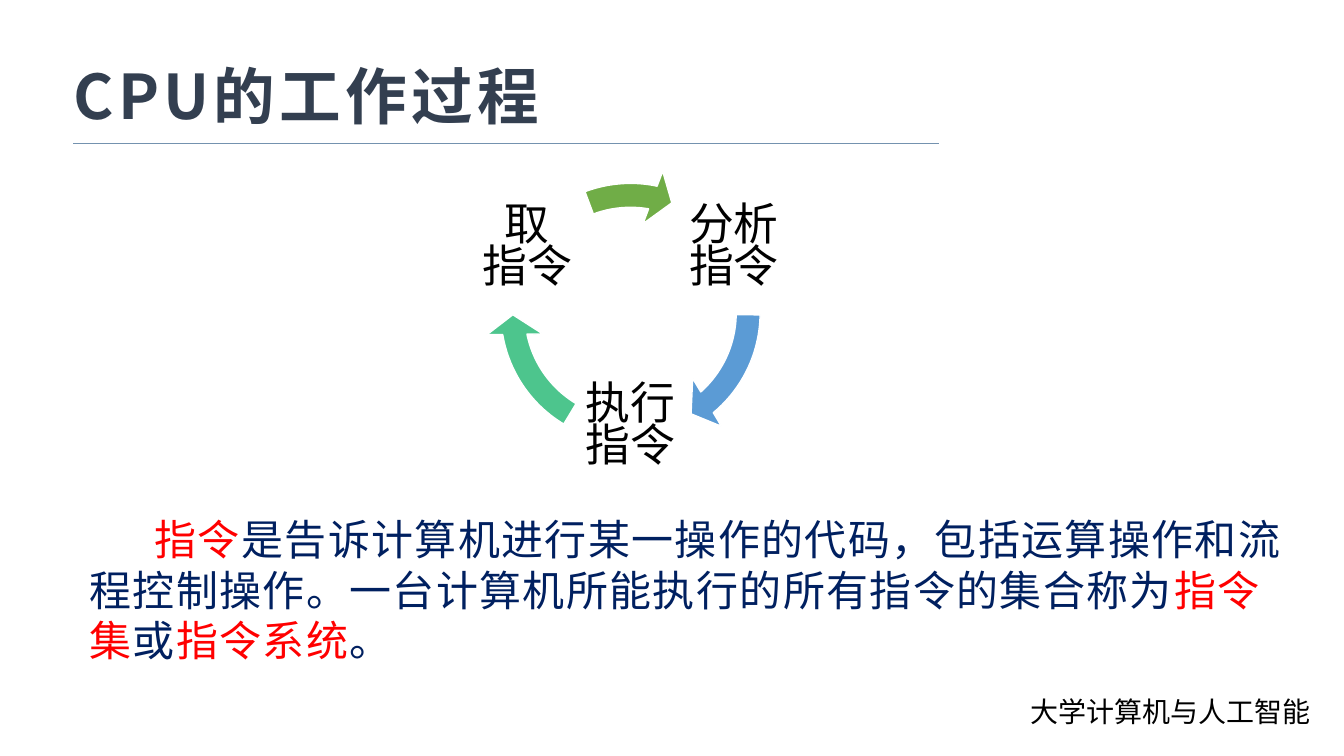
"""Build the slide on the CPU working cycle."""
from dataclasses import dataclass
from math import cos, radians, sin

from lxml.etree import SubElement
from pptx import Presentation
from pptx.dml.color import RGBColor
from pptx.enum.shapes import MSO_CONNECTOR as Connector, MSO_SHAPE as Shape
from pptx.enum.text import MSO_ANCHOR as Anchor, MSO_AUTO_SIZE as AutoSize, PP_ALIGN as Align
from pptx.oxml.ns import qn
from pptx.util import Pt


@dataclass(frozen=True)
class Theme:
    font: str = "Noto Sans CJK SC"
    title: str = "333F50"
    rule: str = "7492AF"
    black: str = "000000"
    white: str = "FFFFFF"
    keyword: str = "FF0000"
    body: str = "002060"
    title_size: float = 44
    label_size: float = 32
    body_size: float = 30
    footer_size: float = 20


@dataclass(frozen=True)
class Box:
    left: float
    top: float
    width: float
    height: float


@dataclass(frozen=True)
class Step:
    lines: tuple[str, str]
    angle: float
    arrow_color: str
    arrow_end: float
    arrow_start: float


THEME = Theme()
CENTER_X, CENTER_Y, RADIUS = 450.4, 223.6, 85.3
LABEL_SIDE, ARROW_SIDE = 88, 208
STEPS = (
    Step(("分析", "指令"), -30, "5B9BD5", 29.648, 0.511),
    Step(("执行", "指令"), 90, "4DC58D", 101.73, 72.593),
    Step(("取", "指令"), 210, "70AD47", 168.576, 149.665),
)
BODY = (
    ("指令", THEME.keyword),
    ("是告诉计算机进行某一操作的代码，包括运算操作和流程控制操作。"
     "一台计算机所能执行的所有指令的集合称为", THEME.body),
    ("指令集", THEME.keyword),
    ("或", THEME.body),
    ("指令系统", THEME.keyword),
    ("。", THEME.body),
)


def place(shape, box: Box) -> None:
    shape.left, shape.top = Pt(box.left), Pt(box.top)
    shape.width, shape.height = Pt(box.width), Pt(box.height)


def centered_box(x: float, y: float, side: float) -> Box:
    return Box(x - side / 2, y - side / 2, side, side)


def add_run(paragraph, text: str, size: float, color: str,
            bold: bool = False, spacing: float = 0) -> None:
    run = paragraph.add_run()
    run.text = text
    run.font.size = Pt(size)
    run.font.bold = bold
    run.font.color.rgb = RGBColor.from_string(color)
    run.font.name = THEME.font
    properties = run._r.get_or_add_rPr()
    SubElement(properties, qn("a:ea")).set("typeface", THEME.font)
    if spacing:
        properties.set("spc", str(round(spacing * 100)))


def add_text_frame(slide, box: Box):
    shape = slide.shapes.add_textbox(0, 0, 0, 0)
    place(shape, box)
    shape.text_frame.word_wrap = True
    return shape.text_frame


def add_title(slide) -> None:
    title = slide.shapes.title
    place(title, Box(45.4, 38.2, 862.6, 65.5))
    frame = title.text_frame
    frame.auto_size = AutoSize.NONE
    frame.vertical_anchor = Anchor.MIDDLE
    paragraph = frame.paragraphs[0]
    paragraph.alignment = Align.LEFT
    paragraph.line_spacing = 0.9
    add_run(paragraph, "CPU的工作过程", THEME.title_size, THEME.title, bold=True, spacing=3)


def add_rule(slide) -> None:
    rule = slide.shapes.add_connector(
        Connector.STRAIGHT, Pt(52.5), Pt(102.2), Pt(671), Pt(102.2))
    rule.line.color.rgb = RGBColor.from_string(THEME.rule)
    rule.line.width = Pt(0.5)
    SubElement(rule._element.spPr, qn("a:effectLst"))


def add_label(slide, step: Step) -> None:
    x = CENTER_X + RADIUS * cos(radians(step.angle))
    y = CENTER_Y + RADIUS * sin(radians(step.angle))
    frame = add_text_frame(slide, centered_box(x, y, LABEL_SIDE))
    frame.vertical_anchor = Anchor.MIDDLE
    frame.margin_left = frame.margin_right = Pt(3)
    frame.margin_top = frame.margin_bottom = Pt(3)
    for index, line in enumerate(step.lines):
        paragraph = frame.add_paragraph() if index else frame.paragraphs[0]
        paragraph.alignment = Align.CENTER
        paragraph.line_spacing = 0.5
        paragraph.space_after = Pt(11.2)
        add_run(paragraph, line, THEME.label_size, THEME.black)


def add_arrow(slide, step: Step) -> None:
    arrow = slide.shapes.add_shape(Shape.CIRCULAR_ARROW, 0, 0, 0, 0)
    place(arrow, centered_box(CENTER_X, CENTER_Y, ARROW_SIDE))
    values = (0.082, 5.759, step.arrow_end, step.arrow_start, 0.096)
    for index, value in enumerate(values):
        arrow.adjustments[index] = value
    arrow.shadow.inherit = False
    arrow.fill.solid()
    arrow.fill.fore_color.rgb = RGBColor.from_string(step.arrow_color)
    arrow.line.color.rgb = RGBColor.from_string(THEME.white)
    arrow.line.width = Pt(1)


def add_body(slide) -> None:
    frame = add_text_frame(slide, Box(56.9, 363.6, 876.2, 138.2))
    paragraph = frame.paragraphs[0]
    paragraph._p.get_or_add_pPr().set("indent", str(Pt(46.5)))
    for text, color in BODY:
        add_run(paragraph, text, THEME.body_size, color, spacing=1)


def add_footer(slide) -> None:
    paragraph = add_text_frame(slide, Box(727.4, 492.5, 216, 31.7)).paragraphs[0]
    paragraph.alignment = Align.RIGHT
    add_run(paragraph, "大学计算机与人工智能", THEME.footer_size, THEME.black)


def main() -> None:
    presentation = Presentation()
    presentation.slide_width, presentation.slide_height = Pt(960), Pt(540)
    slide = presentation.slides.add_slide(presentation.slide_layouts[5])
    add_rule(slide)
    add_footer(slide)
    add_title(slide)
    for step in STEPS:
        add_label(slide, step)
        add_arrow(slide, step)
    add_body(slide)
    presentation.save("out.pptx")


if __name__ == "__main__":
    main()
